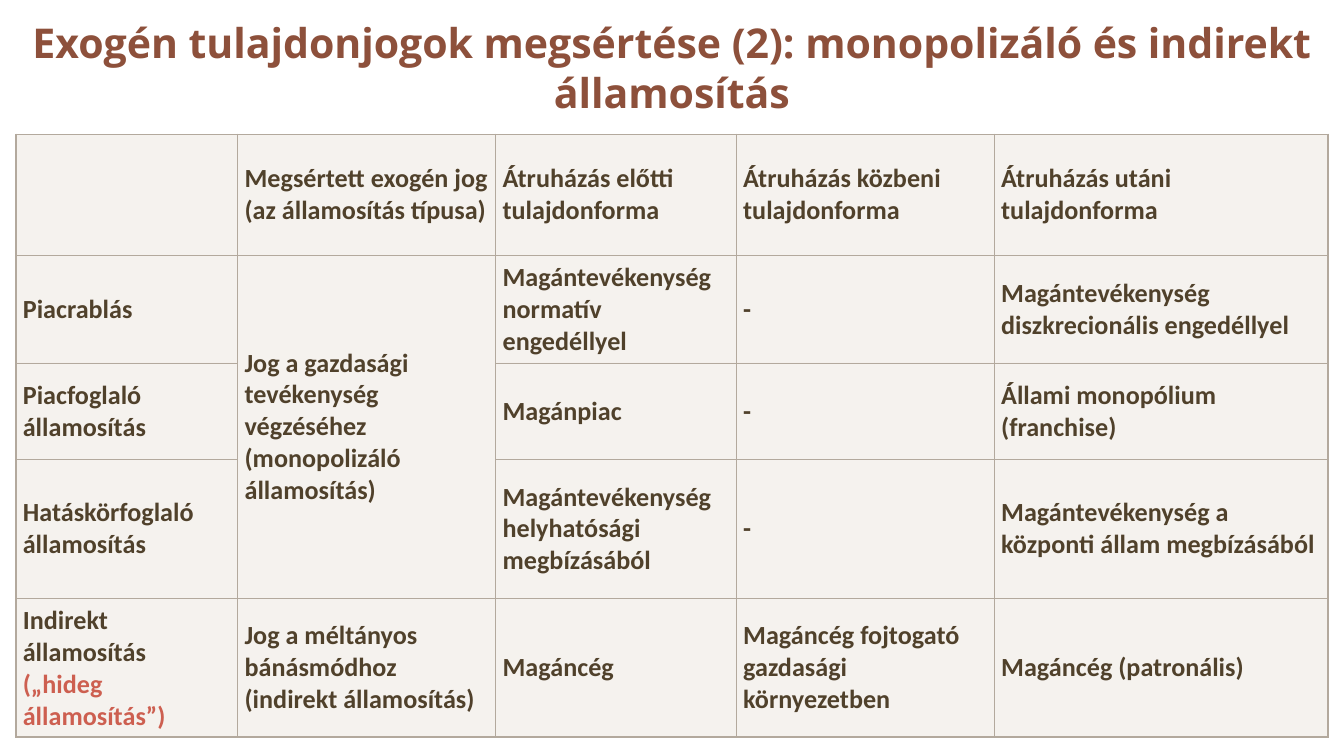
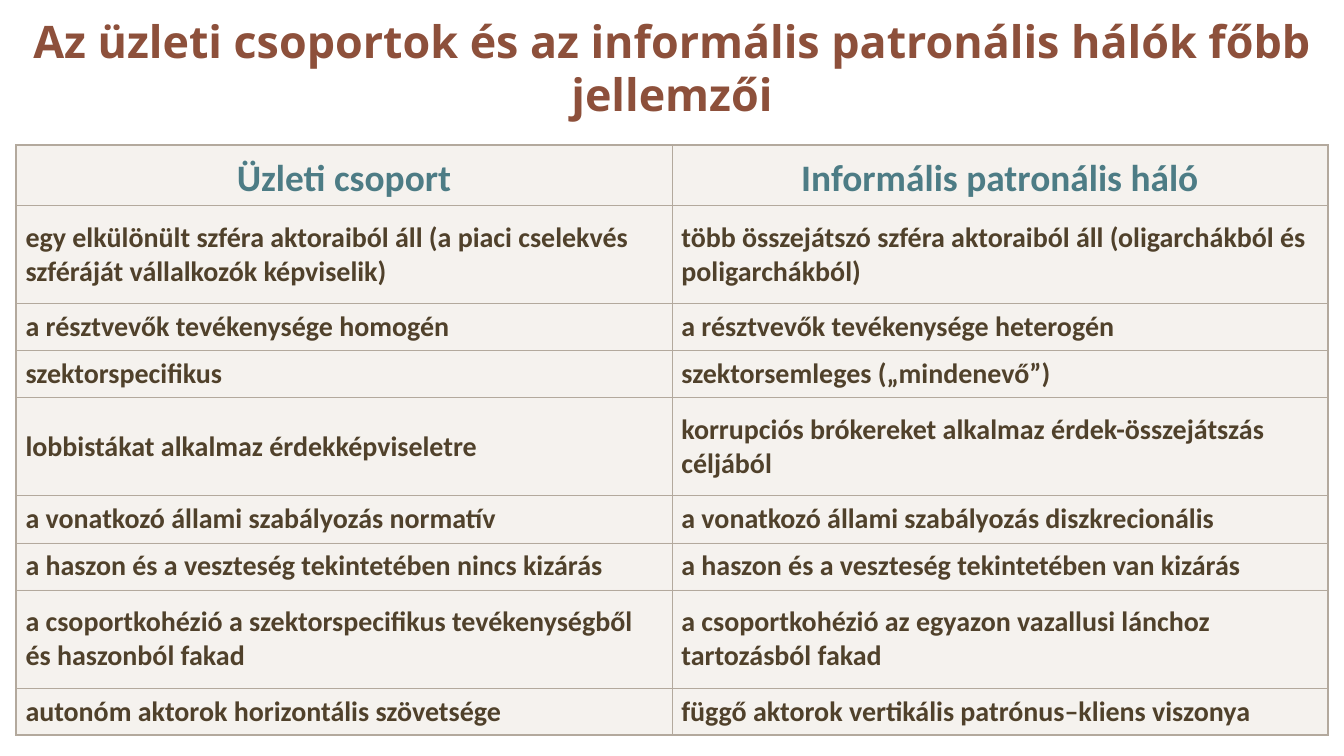
from lxml.etree import SubElement
from pptx import Presentation
from pptx.dml.color import RGBColor
from pptx.enum.text import MSO_ANCHOR, PP_ALIGN
from pptx.oxml.ns import qn
from pptx.util import Inches, Pt

COLD_NATIONALIZATION = "(„hideg államosítás”)"

VIOLATIONS = [
    ["", "Megsértett exogén jog (az államosítás típusa)", "Átruházás előtti tulajdonforma",
     "Átruházás közbeni tulajdonforma", "Átruházás utáni tulajdonforma"],
    ["Piacrablás", "Jog a gazdasági tevékenység végzéséhez\n(monopolizáló államosítás)",
     "Magántevékenység normatív engedéllyel", "-",
     "Magántevékenység diszkrecionális engedéllyel"],
    ["Piacfoglaló államosítás", "", "Magánpiac", "-", "Állami monopólium (franchise)"],
    ["Hatáskörfoglaló államosítás", "", "Magántevékenység helyhatósági megbízásából", "-",
     "Magántevékenység a központi állam megbízásából"],
    ["Indirekt államosítás\n" + COLD_NATIONALIZATION,
     "Jog a méltányos bánásmódhoz\n(indirekt államosítás)", "Magáncég",
     "Magáncég fojtogató gazdasági környezetben", "Magáncég (patronális)"],
]

COMPARISON = [
    ["Üzleti csoport", "Informális patronális háló"],
    ["egy elkülönült szféra aktoraiból áll (a piaci cselekvés szféráját vállalkozók képviselik)",
     "több összejátszó szféra aktoraiból áll (oligarchákból és poligarchákból)"],
    ["a résztvevők tevékenysége homogén", "a résztvevők tevékenysége heterogén"],
    ["szektorspecifikus", "szektorsemleges („mindenevő”)"],
    ["lobbistákat alkalmaz érdekképviseletre",
     "korrupciós brókereket alkalmaz érdek-összejátszás céljából"],
    ["a vonatkozó állami szabályozás normatív",
     "a vonatkozó állami szabályozás diszkrecionális"],
    ["a haszon és a veszteség tekintetében nincs kizárás",
     "a haszon és a veszteség tekintetében van kizárás"],
    ["a csoportkohézió a szektorspecifikus tevékenységből és haszonból fakad",
     "a csoportkohézió az egyazon vazallusi lánchoz tartozásból fakad"],
    ["autonóm aktorok horizontális szövetsége",
     "függő aktorok vertikális patrónus–kliens viszonya"],
]


def rgb(value):
    """Turn a hex string into a colour."""
    return RGBColor.from_string(value)


def write(frame, text, *, size, color, font, align=PP_ALIGN.LEFT, spacing=1.0, accents=None):
    """Fill a text frame with one bold paragraph per line of text."""
    for index, line in enumerate(text.split("\n")):
        para = frame.add_paragraph() if index else frame.paragraphs[0]
        para.alignment = align
        para.line_spacing = spacing
        span = para.add_run()
        span.text = line
        span.font.size = Pt(size)
        span.font.name = font
        span.font.bold = True
        span.font.color.rgb = rgb((accents or {}).get(line, color))


class Deck:
    """Holds the shared style and the current slide."""

    LEFT, WIDTH = 0.12, 9.76
    TITLE, TEXT, TEAL, RED = "8D503B", "50412B", "4D7C85", "CD5F50"
    FILL, BORDER = "EFEAE4", "B3A99D"
    TITLE_FONT, BODY_FONT = "Open Sans", "Calibri"

    def __init__(self):
        """Start an empty widescreen presentation."""
        self.deck = Presentation()
        self.deck.slide_width = Inches(10)
        self.deck.slide_height = Inches(10) * 9 // 16
        self.page = None

    def add_page(self, title, size):
        """Add a blank slide with its title."""
        self.page = self.deck.slides.add_slide(self.deck.slide_layouts[6])
        box = self.page.shapes.add_textbox(
            Inches(self.LEFT), Inches(0), Inches(self.WIDTH), Inches(1))
        box.text_frame.word_wrap = True
        box.text_frame.vertical_anchor = MSO_ANCHOR.MIDDLE
        write(box.text_frame, title, size=size, color=self.TITLE, font=self.TITLE_FONT,
              align=PP_ALIGN.CENTER)

    def add_table(self, rows, top, widths, heights, margins, body, header=None, merges=()):
        """Add a framed table; header overrides the body format in the first row."""
        shape = self.page.shapes.add_table(
            len(rows), len(widths), Inches(self.LEFT), Inches(top),
            Inches(self.WIDTH), Inches(sum(heights)))
        table = shape.table
        table.first_row = table.horz_banding = False
        for column, width in zip(table.columns, widths):
            column.width = Inches(width)
        for row, height in zip(table.rows, heights):
            row.height = Inches(height)
        for r, texts in enumerate(rows):
            for c, text in enumerate(texts):
                cell = table.cell(r, c)
                cell.vertical_anchor = MSO_ANCHOR.MIDDLE
                cell.margin_left = cell.margin_right = Inches(margins[0])
                cell.margin_top = cell.margin_bottom = Inches(margins[1])
                outer = {"L": c == 0, "R": c == len(widths) - 1,
                         "T": r == 0, "B": r == len(rows) - 1}
                self.style_cell(cell, outer)
                if text:
                    extra = header if header and r == 0 else {}
                    style = {"color": self.TEXT, "font": self.BODY_FONT, **body, **extra}
                    write(cell.text_frame, text, **style)
        for first, last in merges:
            table.cell(*first).merge(table.cell(*last))

    def style_cell(self, cell, outer):
        """Draw the borders, thicker on the outer edge, and the translucent fill."""
        properties = cell._tc.get_or_add_tcPr()
        for side, is_outer in outer.items():
            line = SubElement(properties, qn("a:ln" + side), w=str(Pt(1 if is_outer else 0.5)))
            solid = SubElement(line, qn("a:solidFill"))
            SubElement(solid, qn("a:srgbClr"), val=self.BORDER)
        cell.fill.solid()
        cell.fill.fore_color.rgb = rgb(self.FILL)
        shade = properties.find(qn("a:solidFill")).find(qn("a:srgbClr"))
        SubElement(shade, qn("a:alpha"), val="60000")


def main():
    """Build both slides and save the file."""
    deck = Deck()

    deck.add_page("Exogén tulajdonjogok megsértése (2): monopolizáló és indirekt államosítás", 22)
    deck.add_table(
        VIOLATIONS, top=1, widths=[1.65, 1.92, 1.79, 1.92, 2.48],
        heights=[0.9, 0.72, 0.72, 1.03, 1.03], margins=(0.05, 0.05),
        body={"size": 14, "accents": {COLD_NATIONALIZATION: deck.RED}},
        merges=[((1, 1), (3, 1))])

    deck.add_page("Az üzleti csoportok és az informális patronális hálók főbb jellemzői", 24)
    single, double = 0.35, 0.73
    deck.add_table(
        COMPARISON, top=1.08, widths=[deck.WIDTH / 2] * 2,
        heights=[0.45] + [double, single, single] * 2 + [double, single],
        margins=(0.07, 0), body={"size": 15},
        header={"size": 20, "color": deck.TEAL, "align": PP_ALIGN.CENTER, "spacing": 1.15})

    deck.deck.save("out.pptx")


if __name__ == "__main__":
    main()
